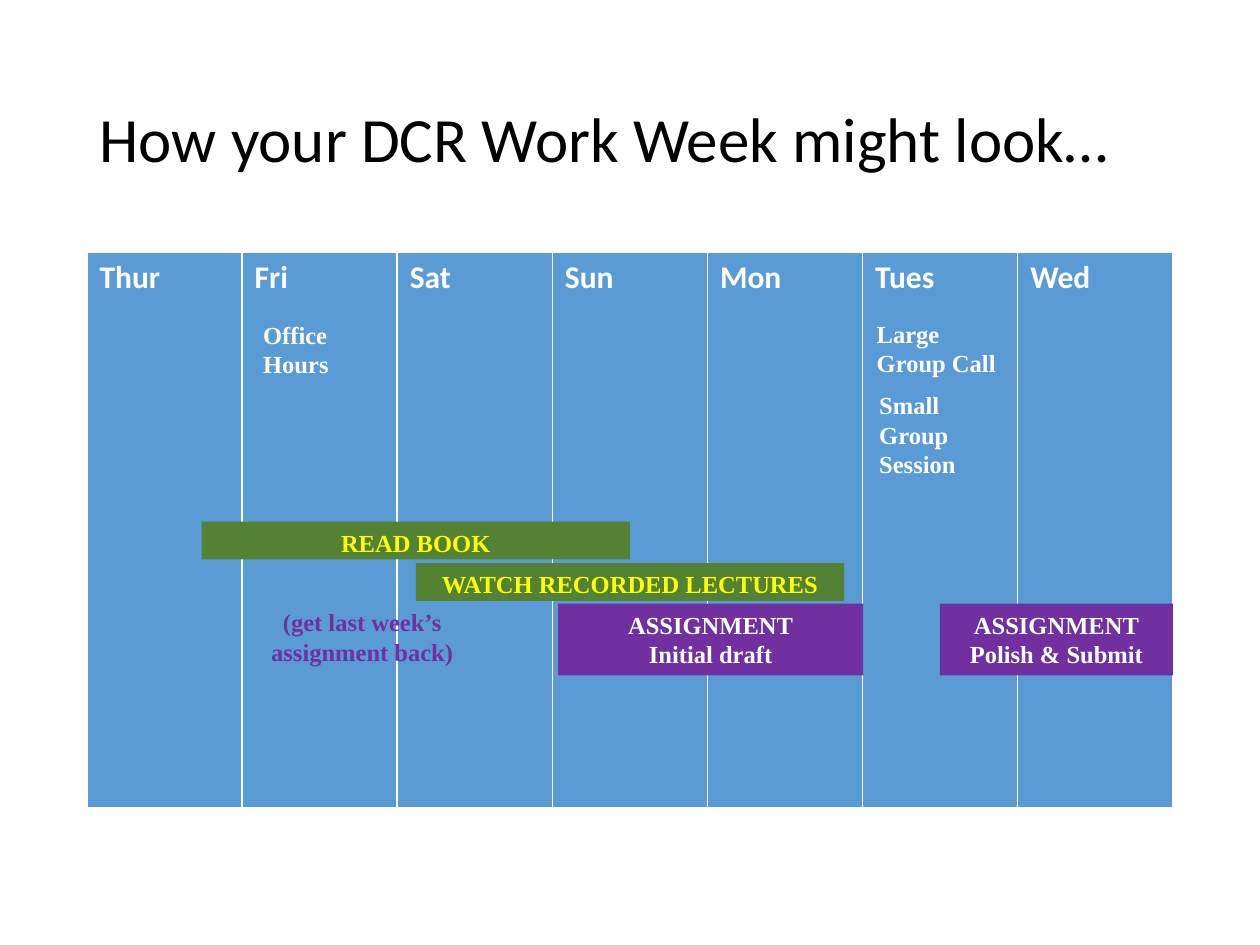
from lxml.etree import SubElement
from pptx import Presentation
from pptx.dml.color import RGBColor
from pptx.enum.shapes import MSO_SHAPE
from pptx.enum.text import MSO_ANCHOR, PP_ALIGN
from pptx.oxml.ns import qn
from pptx.util import Inches, Pt

WHITE, BLACK, YELLOW = "FFFFFF", "000000", "FFFF00"
BLUE, GREEN, PURPLE = "5B9BD5", "548235", "7030A0"
LABEL = {"name": "Times New Roman", "size": Pt(14), "bold": True}
HEADING = {"name": "Calibri", "size": Pt(18), "bold": True}
TITLE = {"name": "Calibri", "size": Pt(36), "bold": False}
DAYS = ["Thur", "Fri", "Sat", "Sun", "Mon", "Tues", "Wed"]
BORDERS = {"a:lnL": 1, "a:lnR": 1, "a:lnT": 1, "a:lnB": 3}
NOTES = [
    ((6.86, 2.48, 1.29, 0.57), "Large Group Call", WHITE, PP_ALIGN.LEFT),
    ((6.88, 3.05, 0.93, 0.57), "Small Group Session", WHITE, PP_ALIGN.LEFT),
    ((1.99, 2.49, 0.93, 0.57), "Office Hours", WHITE, PP_ALIGN.LEFT),
    ((1.95, 4.77, 1.85, 0.76), "(get last week’s assignment back)", PURPLE, PP_ALIGN.CENTER),
]
TASKS = [
    ((1.6, 4.14, 3.4, 0.3), ["READ BOOK"], GREEN, YELLOW),
    ((3.3, 4.47, 3.4, 0.3), ["WATCH RECORDED LECTURES"], GREEN, YELLOW),
    ((4.43, 4.79, 2.42, 0.57), ["ASSIGNMENT", "Initial draft"], PURPLE, WHITE),
    ((7.46, 4.79, 1.85, 0.57), ["ASSIGNMENT", "Polish & Submit"], PURPLE, WHITE),
]


def rgb(value):
    """Turn a hex string into a colour."""
    return RGBColor.from_string(value)


def inches(box):
    """Turn a left, top, width, height box into lengths."""
    return [Inches(v) for v in box]


def write(tf, lines, fmt, color, align=PP_ALIGN.LEFT):
    """Write one formatted paragraph for each line."""
    for i, line in enumerate(lines):
        p = tf.add_paragraph() if i else tf.paragraphs[0]
        p.alignment = align
        r = p.add_run()
        r.text = line
        for name, value in fmt.items():
            setattr(r.font, name, value)
        r.font.color.rgb = rgb(color)


def add_title(s, box, text):
    """Place and format the title placeholder."""
    sp = s.shapes.title
    sp.left, sp.top, sp.width, sp.height = inches(box)
    tf = sp.text_frame
    tf.vertical_anchor = MSO_ANCHOR.MIDDLE
    write(tf, [text], TITLE, BLACK)
    tf.paragraphs[0].line_spacing = 0.9


def add_borders(cell):
    """Give a cell its white borders ahead of its fill."""
    props = cell._tc.get_or_add_tcPr()
    for tag, width in BORDERS.items():
        ln = SubElement(props, qn(tag), w=str(Pt(width)))
        fill = SubElement(ln, qn("a:solidFill"))
        SubElement(fill, qn("a:srgbClr"), val=WHITE)


def add_week(s, box, days):
    """Add the table with one column for each day."""
    table = s.shapes.add_table(1, len(days), *inches(box)).table
    for cell, day in zip(table.rows[0].cells, days):
        add_borders(cell)
        cell.fill.solid()
        cell.fill.fore_color.rgb = rgb(BLUE)
        write(cell.text_frame, [day], HEADING, WHITE)


def add_note(s, box, text, color, align):
    """Add a wrapped text note."""
    tf = s.shapes.add_textbox(*inches(box)).text_frame
    tf.word_wrap = True
    write(tf, [text], LABEL, color, align)


def add_task(s, box, lines, fill, color):
    """Add a filled task bar."""
    sp = s.shapes.add_shape(MSO_SHAPE.RECTANGLE, *inches(box))
    sp.shadow.inherit = False
    sp.fill.solid()
    sp.fill.fore_color.rgb = rgb(fill)
    sp.line.fill.background()
    tf = sp.text_frame
    tf.word_wrap = True
    tf.vertical_anchor = MSO_ANCHOR.TOP
    write(tf, lines, LABEL, color, PP_ALIGN.CENTER)


def main():
    """Build and save the slide."""
    prs = Presentation()
    prs.slide_width, prs.slide_height = Inches(10), Inches(7.5)
    s = prs.slides.add_slide(prs.slide_layouts[5])
    add_title(s, (0.69, 0.4, 8.62, 1.45), "How your DCR Work Week might look…")
    add_week(s, (0.69, 2, 8.62, 4.42), DAYS)
    for note in NOTES:
        add_note(s, *note)
    for task in TASKS:
        add_task(s, *task)
    prs.save("out.pptx")


if __name__ == "__main__":
    main()
